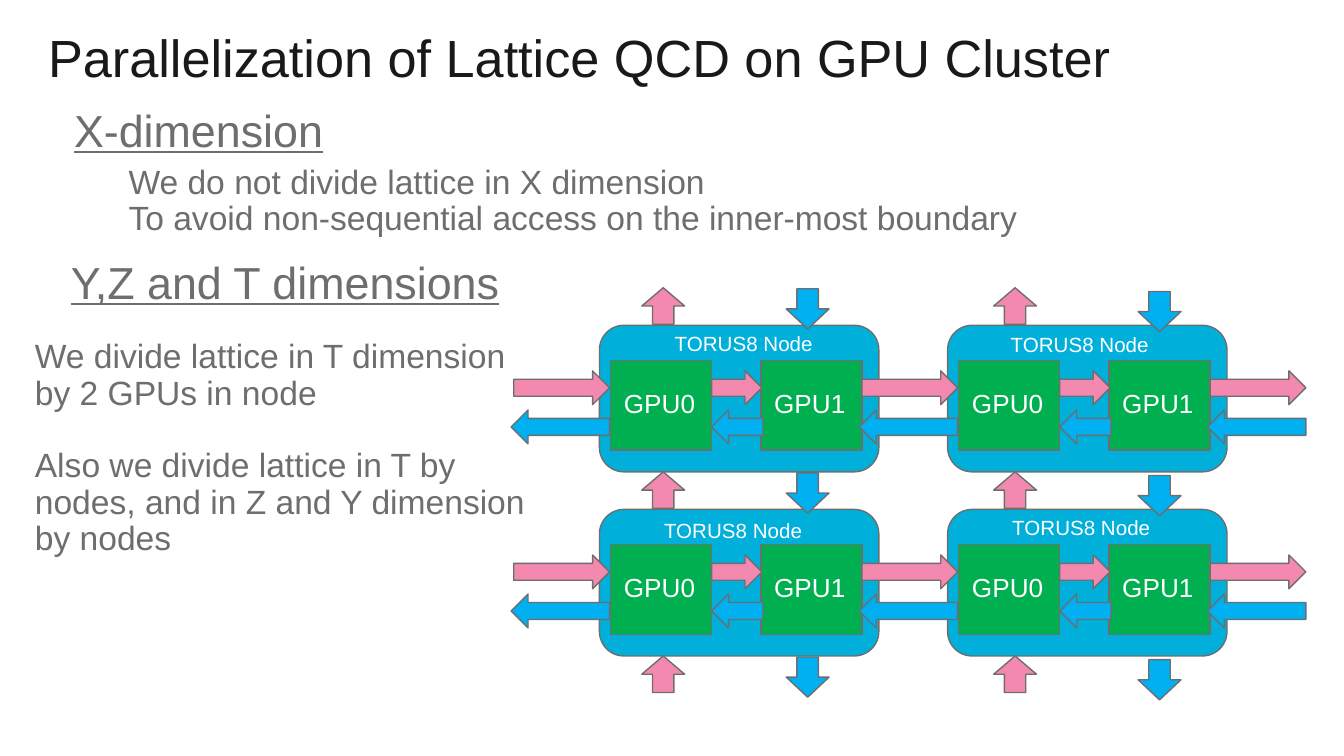
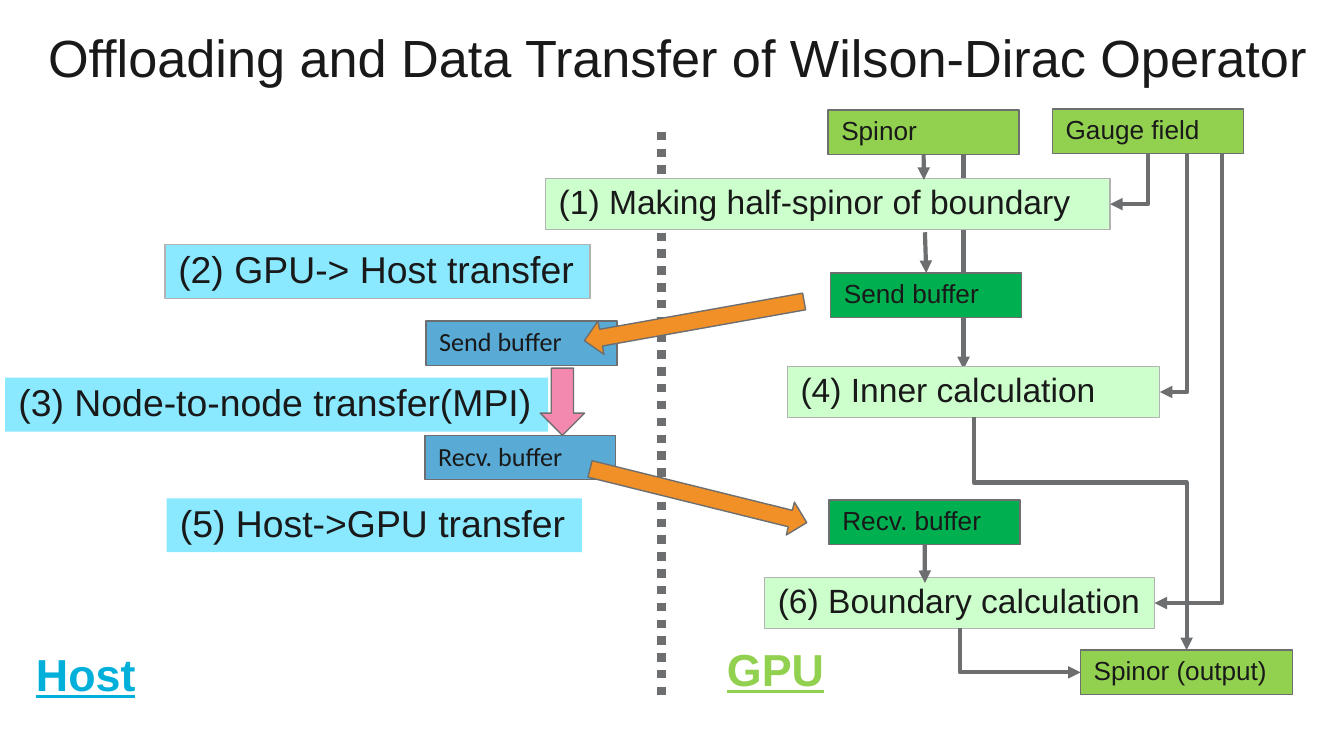
from dataclasses import dataclass
from itertools import product

from lxml import etree
from pptx import Presentation
from pptx import util as u
from pptx.dml import color
from pptx.enum import dml, shapes, text
from pptx.oxml.ns import qn

KIND = shapes.MSO_SHAPE
TOP, LEFT, BOTTOM, RIGHT = range(4)


@dataclass(frozen=True)
class Theme:
    ink: str = "191919"
    grey: str = "6D6E70"
    pale_grey: str = "B2B2B2"
    white: str = "FFFFFF"
    node: str = "00B0DA"
    gpu: str = "00B050"
    forward: str = "F389AF"
    backward: str = "00B0F0"
    copy: str = "F19027"
    field: str = "92D050"
    kernel: str = "CCFFCC"
    host_step: str = "8AE8FF"
    host_buffer: str = "59ABD6"
    font: str = "Arial"
    host_font: str = "Calibri"
    title: float = 28
    heading: float = 24
    step: float = 20
    body: float = 18
    label: float = 14
    small: float = 11
    outline: float = 0.75
    flow: float = 2.25
    divider: float = 4.5


THEME = Theme()


@dataclass(frozen=True)
class Box:
    """Origin of a region, in centimetres."""
    left: float
    top: float

    def point(self, x, y):
        return u.Cm(self.left + x), u.Cm(self.top + y)

    def area(self, x, y, width, height):
        return *self.point(x, y), u.Cm(width), u.Cm(height)


PAGE = Box(0, 0)


def rgb(value):
    return color.RGBColor.from_string(value)


# Text and shapes

def write(shape, lines, size, ink, font=THEME.font, wrap=False, grow=True,
          gap=0, bold=None, underline=None):
    frame = shape.text_frame
    frame.word_wrap = wrap
    if grow:
        frame.auto_size = text.MSO_AUTO_SIZE.SHAPE_TO_FIT_TEXT
    frame.vertical_anchor = text.MSO_ANCHOR.TOP if grow else text.MSO_ANCHOR.MIDDLE
    for index, line in enumerate(lines):
        paragraph = frame.add_paragraph() if index else frame.paragraphs[0]
        paragraph.alignment = text.PP_ALIGN.LEFT
        paragraph.line_spacing = 0.9
        if index and gap:
            paragraph.space_before = u.Pt(gap)
        run = paragraph.add_run()
        run.text = line
        run.font.name = font
        run.font.size = u.Pt(size)
        run.font.bold = bold
        run.font.underline = underline
        run.font.color.rgb = rgb(ink)


def add_text(slide, area, lines, size, ink, **style):
    shape = slide.shapes.add_textbox(*area)
    write(shape, lines, size, ink, **style)
    return shape


def add_shape(slide, kind, area, fill, line=THEME.grey):
    shape = slide.shapes.add_shape(kind, *area)
    shape.shadow.inherit = False
    shape.fill.solid()
    shape.fill.fore_color.rgb = rgb(fill)
    if line:
        shape.line.color.rgb = rgb(line)
        shape.line.width = u.Pt(THEME.outline)
    else:
        shape.line.fill.background()
    return shape


def add_label(slide, area, caption, fill, ink=THEME.ink, font=THEME.font):
    shape = add_shape(slide, KIND.RECTANGLE, area, fill)
    write(shape, [caption], THEME.label, ink, font, grow=False)
    return shape


def add_step(slide, area, caption, fill, size, line=None, wrap=False):
    shape = add_shape(slide, KIND.RECTANGLE, area, fill, line)
    write(shape, [caption], size, THEME.ink, wrap=wrap)
    return shape


def add_title(slide, caption):
    shape = add_text(slide, PAGE.area(0.91, 0.61, 24.13, 1.09), [caption],
                     THEME.title, THEME.ink, wrap=True)
    frame = shape.text_frame
    frame.margin_left = frame.margin_right = frame.margin_top = frame.margin_bottom = 0


# Connectors

def style_line(connector, width=THEME.flow, arrow=True):
    connector.line.color.rgb = rgb(THEME.grey)
    connector.line.width = u.Pt(width)
    properties = connector._element.spPr
    if arrow:
        etree.SubElement(properties.find(qn("a:ln")), qn("a:tailEnd"), type="triangle")
    etree.SubElement(properties, qn("a:effectLst"))


def add_line(slide, begin, end, **style):
    connector = slide.shapes.add_connector(shapes.MSO_CONNECTOR.STRAIGHT, *begin, *end)
    style_line(connector, **style)
    return connector


def add_elbow(slide, source, target, side, offset=0, bend=None):
    """Leave the bottom of source downwards and reach a side of target."""
    begin_x = source.left + source.width // 2 + u.Cm(offset)
    begin_y = source.top + source.height
    end_x, end_y = {
        TOP: (target.left + target.width // 2, target.top),
        LEFT: (target.left, target.top + target.height // 2),
        RIGHT: (target.left + target.width, target.top + target.height // 2),
    }[side]
    connector = slide.shapes.add_connector(
        shapes.MSO_CONNECTOR.ELBOW, begin_x, begin_y, end_x, end_y)
    if not offset:
        connector.begin_connect(source, BOTTOM)
    connector.end_connect(target, side)
    style_line(connector)

    # The preset starts sideways, so it is turned to start downwards
    across, down = end_x - begin_x, end_y - begin_y
    connector.width, connector.height = down, abs(across)
    connector.left = (begin_x + end_x - down) // 2
    connector.top = (begin_y + end_y - abs(across)) // 2
    properties = connector._element.spPr
    frame = properties.find(qn("a:xfrm"))
    for flip in ("flipH", "flipV"):
        frame.attrib.pop(flip, None)
    frame.set("rot", str((270 if across > 0 else 90) * 60000))
    if across > 0:
        frame.set("flipH", "1")
    geometry = properties.find(qn("a:prstGeom"))
    if bend is None:
        geometry.set("prst", "bentConnector2")
    else:
        etree.SubElement(geometry.find(qn("a:avLst")), qn("a:gd"),
                         name="adj1", fmla=f"val {round(bend * 100000)}")


# Slide 1: lattice division over the cluster

def dimension_notes(slide, box):
    for x, y, width, caption in ((0.74, 0, 5.28, "X-dimension"),
                                 (0.68, 2.87, 8.69, "Y,Z and T dimensions")):
        add_text(slide, box.area(x, y, width, 1.17), [caption],
                 THEME.heading, THEME.grey, underline=True)
    add_text(slide, box.area(1.77, 1.07, 17.58, 1.65),
             ["We do not divide lattice in X dimension",
              "To avoid non-sequential access on the inner-most boundary"],
             THEME.body, THEME.grey)
    add_text(slide, box.area(0, 4.37, 10.19, 4.42),
             ["We divide lattice in T dimension by 2 GPUs in node",
              "Also we divide lattice in T by nodes, and in Z and Y dimension by nodes"],
             THEME.body, THEME.grey, wrap=True, gap=19.5)


def exchange(slide, box, forward_x, forward_width, backward_x, backward_width):
    add_shape(slide, KIND.RIGHT_ARROW,
              box.area(forward_x, 0.86, forward_width, 0.64), THEME.forward)
    add_shape(slide, KIND.LEFT_ARROW,
              box.area(backward_x, 1.6, backward_width, 0.64), THEME.backward)


def cluster_node(slide, box):
    add_shape(slide, KIND.ROUNDED_RECTANGLE, box.area(0, 0, 5.28, 2.77), THEME.node)
    for index in range(2):
        add_label(slide, box.area(0.21 + 2.84 * index, 0.66, 1.91, 1.7),
                  f"GPU{index}", THEME.gpu, THEME.white)
    exchange(slide, box, 2.12, 0.95, 2.12, 0.97)


def cluster(slide, box):
    column_pitch, row_pitch, vertical_pitch = 6.58, 3.48, 6.65

    def cell(row, column, pitch=column_pitch):
        return Box(box.left + pitch * column, box.top + row_pitch * row)

    # Nodes
    for row, column in product(range(2), range(2)):
        cluster_node(slide, cell(row, column))
    # Links along a row, including both open ends
    for row, column in product(range(2), range(-1, 2)):
        exchange(slide, cell(row, column), 4.96, 1.81, 4.91, 1.86)
    # Links between rows, including both open ends
    for row, column in product(range(3), range(2)):
        corner = cell(row, column, vertical_pitch)
        add_shape(slide, KIND.UP_ARROW, corner.area(0.8, -0.71, 0.81, 0.69),
                  THEME.forward)
        add_shape(slide, KIND.DOWN_ARROW,
                  corner.area(3.53, -0.69 + 0.05 * column, 0.81, 0.76), THEME.backward)
    # Node names
    name_offsets = ((1.17, 0.03), (0.94, 0.05), (0.97, 0.08), (0.97, 0.03))
    for (row, column), offset in zip(product(range(2), range(2)), name_offsets):
        add_text(slide, cell(row, column).area(*offset, 3.25, 0.69),
                 ["TORUS8 Node"], THEME.small, THEME.white)


def parallelization_slide(slide):
    add_title(slide, "Parallelization of Lattice QCD on GPU Cluster")
    dimension_notes(slide, Box(0.41, 1.93))
    cluster(slide, Box(11.33, 6.15))


# Slide 2: data flow between host and GPU

def side_name(slide, area, caption, ink):
    add_text(slide, area, [caption], THEME.heading, ink, bold=True, underline=True)


def host_side(slide, box):
    for x, y, caption in ((7.95, 1.45, "Send buffer"), (7.93, 3.61, "Recv. buffer")):
        add_label(slide, box.area(x, y, 3.61, 0.84), caption,
                  THEME.host_buffer, font=THEME.host_font)
    for x, y, width, caption, line in (
            (3.02, 0, 8.03, "(2) GPU-> Host transfer", THEME.pale_grey),
            (0, 2.52, 10.26, "(3) Node-to-node transfer(MPI)", None),
            (3.05, 4.8, 7.85, "(5) Host->GPU transfer", None)):
        add_step(slide, box.area(x, y, width, 1.02), caption,
                 THEME.host_step, THEME.step, line)
    add_shape(slide, KIND.DOWN_ARROW, box.area(10.11, 2.34, 0.84, 1.27), THEME.forward)
    side_name(slide, box.area(0.33, 7.6, 2.41, 1.17), "Host", THEME.node)


def gpu_side(slide, box):
    # Spinor to inner calculation, behind the boxes
    add_line(slide, box.point(7.9, 0.86), box.point(7.9, 4.92))

    # Data
    spinor, gauge, send, receive, output = (
        add_label(slide, box.area(x, y, width, 0.84), caption, fill)
        for x, y, width, caption, fill in (
            (5.34, 0.02, 3.61, "Spinor", THEME.field),
            (9.58, 0, 3.61, "Gauge field", THEME.field),
            (5.39, 3.1, 3.61, "Send buffer", THEME.gpu),
            (5.36, 7.39, 3.61, "Recv. buffer", THEME.gpu),
            (10.11, 10.23, 4.01, "Spinor (output)", THEME.field)))
    # Calculations
    half_spinor, inner, boundary = (
        add_step(slide, box.area(x, y, width, 0.96), caption,
                 THEME.kernel, THEME.body, THEME.pale_grey, wrap=True)
        for x, y, width, caption in (
            (0, 1.32, 10.67, "(1) Making half-spinor of boundary"),
            (4.57, 4.87, 7.04, "(4) Inner calculation"),
            (4.14, 8.86, 7.37, "(6) Boundary calculation")))

    # Straight flow
    add_line(slide, box.point(7.15, 0.86), box.point(7.15, 1.34)).begin_connect(spinor, BOTTOM)
    add_line(slide, box.point(7.17, 2.33), box.point(7.2, 3.1)).end_connect(send, TOP)
    add_line(slide, box.point(7.17, 8.23), box.point(7.17, 8.96)).begin_connect(receive, BOTTOM)
    # Bent flow
    for target, offset in ((half_spinor, 0), (inner, 0.74), (boundary, 1.4)):
        add_elbow(slide, gauge, target, RIGHT, offset)
    add_elbow(slide, inner, output, TOP, bend=0.28)
    add_elbow(slide, boundary, output, LEFT)
    side_name(slide, box.area(3.18, 10.06, 2.36, 1.3), "GPU", THEME.field)


def copy_arrows(slide, box):
    for x, y, angle in ((0, 0, 79.9), (0.08, 3.3, 283.9)):
        arrow = add_shape(slide, KIND.DOWN_ARROW, box.area(x, y, 0.64, 4.22), THEME.copy)
        arrow.rotation = angle


def offloading_slide(slide):
    add_title(slide, "Offloading and Data Transfer of Wilson-Dirac Operator")
    divider = add_line(slide, PAGE.point(12.5, 2.49), PAGE.point(12.5, 13.13),
                       width=THEME.divider, arrow=False)
    divider.line.dash_style = dml.MSO_LINE.ROUND_DOT
    host_side(slide, Box(0.1, 4.62))
    gpu_side(slide, Box(10.31, 2.06))
    copy_arrows(slide, Box(12.8, 3.96))


def main():
    presentation = Presentation()
    presentation.slide_width, presentation.slide_height = u.Cm(25.4), u.Cm(14.29)
    blank = presentation.slide_layouts[6]
    for build in (parallelization_slide, offloading_slide):
        build(presentation.slides.add_slide(blank))
    presentation.save("out.pptx")


if __name__ == "__main__":
    main()
